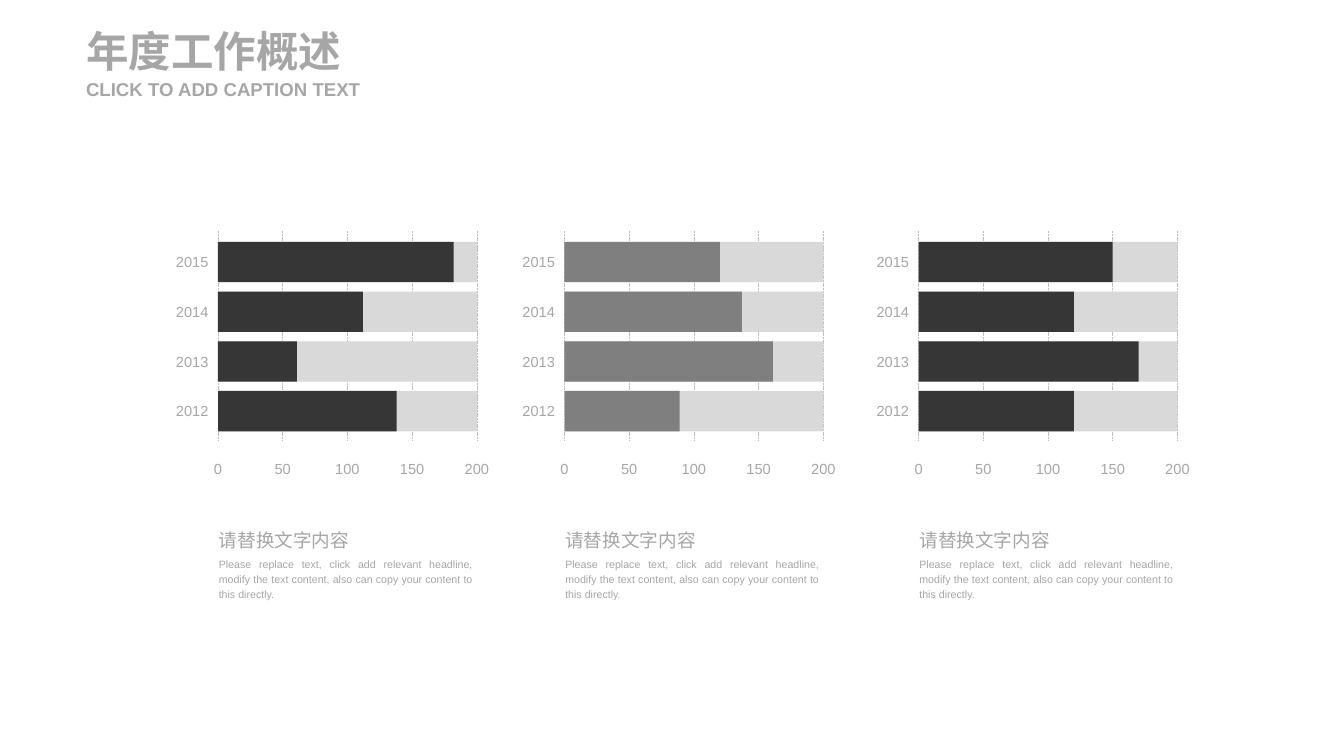
from dataclasses import dataclass

from lxml.etree import SubElement
from pptx import Presentation
from pptx.dml.color import RGBColor
from pptx.enum.dml import MSO_LINE
from pptx.enum.shapes import MSO_CONNECTOR, MSO_SHAPE
from pptx.enum.text import MSO_ANCHOR, MSO_AUTO_SIZE, PP_ALIGN
from pptx.oxml.ns import qn
from pptx.shapes.base import BaseShape
from pptx.shapes.shapetree import GroupShapes, SlideShapes
from pptx.util import Pt

TEXT_GRAY = RGBColor(0xA6, 0xA6, 0xA6)
GRID_GRAY = RGBColor(0xBF, 0xBF, 0xBF)
TRACK_GRAY = RGBColor(0xD9, 0xD9, 0xD9)
DARK_GRAY = RGBColor(0x36, 0x36, 0x36)
MID_GRAY = RGBColor(0x7F, 0x7F, 0x7F)

FONT = "Arial"
YEARS = (2015, 2014, 2013, 2012)
TICKS = range(0, 201, 50)
HEADLINE = "请替换文字内容"
DESCRIPTION = (
    "Please replace text, click add relevant headline, modify the text content, "
    "also can copy your content to this directly."
)

SCALE = 195 / 200
GRID_TOP, GRID_BOTTOM = 174.2, 332.6
BAR_TOP, BAR_STEP, BAR_HEIGHT = 182.2, 37.45, 30.4
YEAR_WIDTH, LABEL_HEIGHT, TICK_TOP = 39.4, 23, 340.6


@dataclass(frozen=True)
class Box:
    left: float
    top: float
    width: float
    height: float


@dataclass(frozen=True)
class BarPanel:
    left: float
    color: RGBColor
    values: tuple[int, ...]


PANELS = (
    BarPanel(164.2, DARK_GRAY, (182, 112, 61, 138)),
    BarPanel(425.2, MID_GRAY, (120, 137, 161, 89)),
    BarPanel(691.9, DARK_GRAY, (150, 120, 170, 120)),
)


def format_text(
    shape: BaseShape,
    text: str,
    size: float,
    align: PP_ALIGN = PP_ALIGN.LEFT,
    spacing: float = 1.2,
    bold: bool = False,
) -> None:
    shape.text_frame.text = text
    paragraph = shape.text_frame.paragraphs[0]
    paragraph.alignment = align
    paragraph.line_spacing = spacing
    paragraph.space_before = Pt(0)
    font = paragraph.runs[0].font
    font.name = FONT
    font.size = Pt(size)
    font.bold = bold
    font.color.rgb = TEXT_GRAY


def clear_margins(shape: BaseShape) -> None:
    frame = shape.text_frame
    frame.margin_left = frame.margin_right = Pt(0)
    frame.margin_top = frame.margin_bottom = Pt(0)
    frame.word_wrap = True
    frame.auto_size = MSO_AUTO_SIZE.NONE


def fill_placeholder(shape: BaseShape, box: Box, text: str, size: float) -> None:
    shape.left, shape.top = Pt(box.left), Pt(box.top)
    shape.width, shape.height = Pt(box.width), Pt(box.height)
    clear_margins(shape)
    shape.text_frame.vertical_anchor = MSO_ANCHOR.MIDDLE
    format_text(shape, text, size, spacing=1.0, bold=True)


def add_text(shapes: SlideShapes | GroupShapes, box: Box) -> BaseShape:
    return shapes.add_textbox(Pt(box.left), Pt(box.top), Pt(box.width), Pt(box.height))


def add_label(shapes: GroupShapes, box: Box, text: str, align: PP_ALIGN) -> None:
    label = add_text(shapes, box)
    label.text_frame.word_wrap = False
    format_text(label, text, 11, align)


def add_paragraph_box(
    shapes: SlideShapes, box: Box, text: str, size: float, align: PP_ALIGN
) -> None:
    text_box = add_text(shapes, box)
    clear_margins(text_box)
    format_text(text_box, text, size, align)


def add_grid_line(shapes: GroupShapes, x: float) -> None:
    line = shapes.add_connector(
        MSO_CONNECTOR.STRAIGHT, Pt(x), Pt(GRID_TOP), Pt(x), Pt(GRID_BOTTOM)
    )
    line.line.color.rgb = GRID_GRAY
    line.line.width = Pt(0.5)
    line.line.dash_style = MSO_LINE.SQUARE_DOT
    SubElement(line.element.spPr, qn("a:effectLst"))


def add_bar(
    shapes: GroupShapes, left: float, top: float, value: float, color: RGBColor
) -> None:
    bar = shapes.add_shape(
        MSO_SHAPE.RECTANGLE, Pt(left), Pt(top), Pt(value * SCALE), Pt(BAR_HEIGHT)
    )
    bar.shadow.inherit = False
    bar.fill.solid()
    bar.fill.fore_color.rgb = color
    bar.line.fill.background()


def add_panel(shapes: SlideShapes, panel: BarPanel) -> None:
    group = shapes.add_group_shape().shapes
    for tick in TICKS:
        x = panel.left + tick * SCALE
        width = 14.6 + 6.15 * len(str(tick))
        add_grid_line(group, x)
        tick_box = Box(x - width / 2, TICK_TOP, width, LABEL_HEIGHT)
        add_label(group, tick_box, str(tick), PP_ALIGN.CENTER)
    for row, (year, value) in enumerate(zip(YEARS, panel.values)):
        top = BAR_TOP + row * BAR_STEP
        add_bar(group, panel.left, top, TICKS[-1], TRACK_GRAY)
        add_bar(group, panel.left, top, value, panel.color)
        year_box = Box(panel.left - YEAR_WIDTH, top + 2.2, YEAR_WIDTH, LABEL_HEIGHT)
        add_label(group, year_box, str(year), PP_ALIGN.RIGHT)

    text_left = panel.left + 0.6
    add_paragraph_box(
        shapes, Box(text_left, 395.3, 131, 20), HEADLINE, 14, PP_ALIGN.LEFT
    )
    add_paragraph_box(
        shapes, Box(text_left, 418.3, 191.5, 34), DESCRIPTION, 8, PP_ALIGN.JUSTIFY
    )


def main() -> None:
    presentation = Presentation()
    presentation.slide_width = Pt(1012.3)
    presentation.slide_height = Pt(569.5)
    slide = presentation.slides.add_slide(presentation.slide_layouts[0])
    title, caption = slide.placeholders
    fill_placeholder(title, Box(64.8, 18.7, 221, 38.9), "年度工作概述", 32)
    fill_placeholder(
        caption, Box(64.8, 58.3, 221, 17.3), "CLICK TO ADD CAPTION TEXT", 14
    )
    for panel in PANELS:
        add_panel(slide.shapes, panel)
    presentation.save("out.pptx")


if __name__ == "__main__":
    main()
